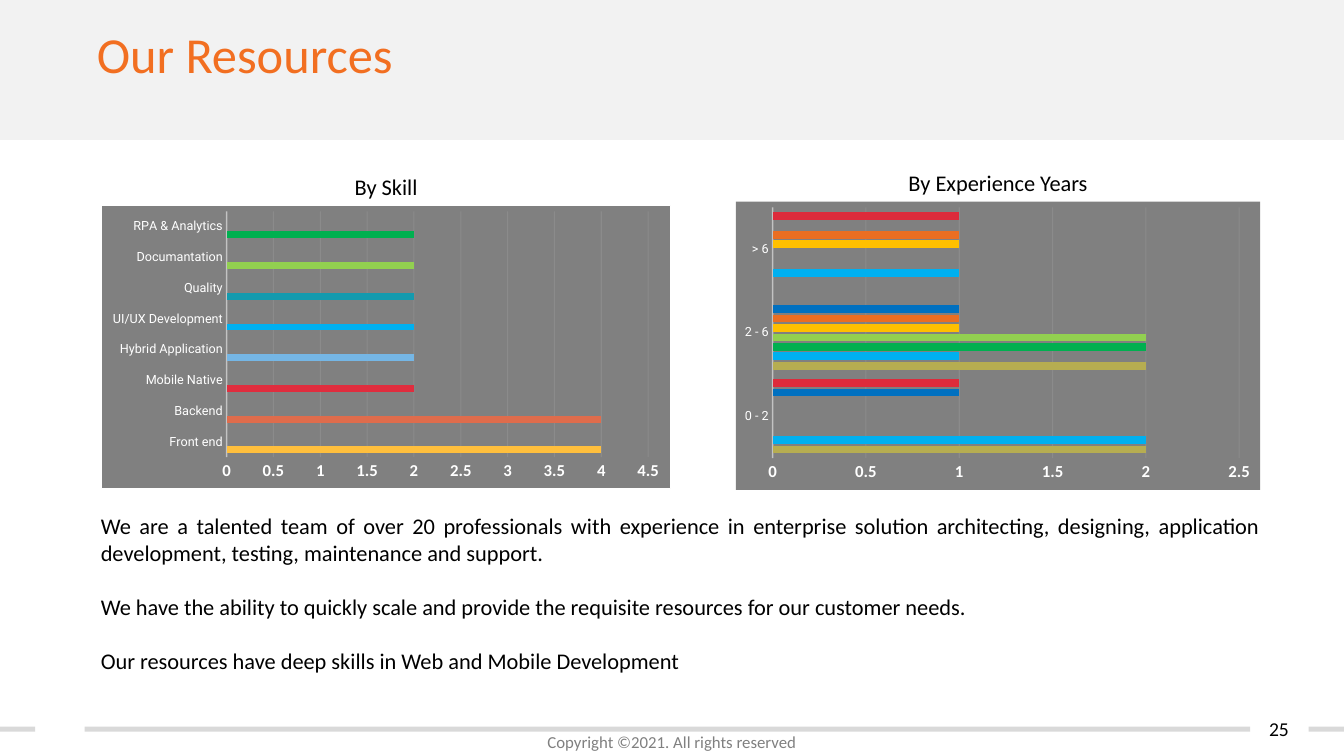
from collections import namedtuple

from lxml import etree
from pptx import Presentation
from pptx.chart.data import CategoryChartData
from pptx.dml.color import RGBColor
from pptx.enum.chart import XL_CHART_TYPE as ChartType, XL_TICK_MARK as TickMark
from pptx.enum.shapes import MSO_SHAPE as Shape
from pptx.enum.text import MSO_ANCHOR as Anchor, PP_ALIGN as Align
from pptx.oxml import parse_xml
from pptx.oxml.ns import nsdecls, qn
from pptx.util import Inches, Pt

WIDTH, HEIGHT = Inches(13.33), Inches(7.5)
Box = namedtuple("Box", "x y w h")

SKILLS = [
    ("Front end", 4, "FFBF3D"),
    ("Backend", 4, "DF6C4C"),
    ("Mobile Native", 2, "E02D3E"),
    ("Hybrid Application", 2, "75B6E5"),
    ("UI/UX Development", 2, "00B0F0"),
    ("Quality", 2, "149AAE"),
    ("Documantation", 2, "92D050"),
    ("RPA & Analytics", 2, "00B050"),
]
EXPERIENCE_YEARS = ["0 - 2", "2 - 6", "> 6"]
EXPERIENCE = [
    ((2, 2, None), "B6AD51"),
    ((2, 1, 1), "00B0F0"),
    ((None, 2, None), "00B050"),
    ((None, 2, None), "92D050"),
    ((None, 1, 1), "FFC000"),
    ((None, 1, 1), "EA6E22"),
    ((1, 1, None), "0070C0"),
    ((1, None, 1), "DD2B3B"),
]
STATEMENTS = [
    "We are a talented team of over 20 professionals with experience in enterprise solution "
    "architecting, designing, application development, testing, maintenance and support.",
    "We have the ability to quickly scale and provide the requisite resources for our customer needs.",
    "Our resources have deep skills in Web and Mobile Development",
]


def color(hex_value):
    """Turn a hex string into a colour."""
    return RGBColor.from_string(hex_value)


def place(box):
    """Turn a box in percent of the slide into lengths."""
    return [int(share * side / 100) for share, side in zip(box, (WIDTH, HEIGHT) * 2)]


def part(box, x, y, w, h):
    """Return a box given in percent of another box."""
    return Box(box.x + box.w * x / 100, box.y + box.h * y / 100, box.w * w / 100, box.h * h / 100)


def style_font(font, size, hex_value, name="Calibri", bold=False):
    """Set the look of a font."""
    font.size, font.name, font.bold = Pt(size), name, bold
    font.color.rgb = color(hex_value)


def write(frame, lines, size, hex_value="000000", align=Align.CENTER, gap=0):
    """Fill a text frame with one paragraph per line."""
    frame.word_wrap = True
    for index, line in enumerate(lines):
        paragraph = frame.add_paragraph() if index else frame.paragraphs[0]
        paragraph.alignment = align
        if index:
            paragraph.space_before = Pt(gap)
        run = paragraph.add_run()
        run.text = line
        style_font(run.font, size, hex_value)


def add_label(slide, box, lines, size, **look):
    """Add a text box and return its frame."""
    frame = slide.shapes.add_textbox(*place(box)).text_frame
    write(frame, lines, size, **look)
    return frame


def add_band(slide, box, hex_value):
    """Add a plain filled rectangle."""
    band = slide.shapes.add_shape(Shape.RECTANGLE, *place(box))
    band.shadow.inherit = False
    band.fill.solid()
    band.fill.fore_color.rgb = color(hex_value)
    band.line.fill.background()


def add_header(slide, box):
    """Draw the header band with the title on it."""
    add_band(slide, box, "F2F2F2")
    title = slide.shapes.title
    title.left, title.top, title.width, title.height = place(part(box, 6.45, 13, 89, 51.5))
    title.text_frame.vertical_anchor = Anchor.TOP
    write(title.text_frame, ["Our Resources"], 36, "F26F21", Align.LEFT)
    title.element.getparent().append(title.element)


def add_footer(slide, box):
    """Draw the footer rule, copyright line and page number."""
    for x, width in ((0, 2.63), (6.3, 86.72), (97.37, 2.63)):
        add_band(slide, part(box, x, 38.5, width, 10.6), "D9D9D9")
    add_label(slide, part(box, 0, 38.5, 100, 61.5), ["Copyright ©2021. All rights reserved"], 12,
              hex_value="808080")
    number = add_label(slide, part(box, 93.1, 0, 4.13, 85), ["25"], 14)
    number.vertical_anchor = Anchor.MIDDLE


def fade(owner, opacity):
    """Set the opacity of the line colour below a chart element."""
    for rgb in owner.iter(qn("a:srgbClr")):
        etree.SubElement(rgb, qn("a:alpha")).set("val", str(opacity * 1000))


def style_axes(chart, maximum):
    """Style the category and value axes."""
    names, values = chart.category_axis, chart.value_axis
    for axis in (names, values):
        axis.major_tick_mark = axis.minor_tick_mark = TickMark.NONE
    names.has_major_gridlines = False
    values.has_major_gridlines = True
    values.minimum_scale, values.maximum_scale, values.major_unit = 0, maximum, 0.5
    grid = values.major_gridlines.format.line
    for line, width in ((names.format.line, 1), (grid, 0.75)):
        line.width = Pt(width)
        line.color.rgb = color("F2F2F2")
    fade(chart.element.find(".//" + qn("c:catAx")), 54)
    fade(chart.element.find(".//" + qn("c:majorGridlines")), 10)
    values.format.line.fill.background()
    style_font(names.tick_labels.font, 9, "FFFFFF", "Roboto")
    style_font(values.tick_labels.font, 12, "FFFFFF", bold=True)


def style_area(chart, plot_x, plot_width, border):
    """Fill the chart area and fix the place of the plot in it."""
    outline = f'<a:solidFill><a:srgbClr val="{border}"/></a:solidFill>' if border else "<a:noFill/>"
    chart.element.find(qn("c:chart")).addnext(parse_xml(
        f'<c:spPr {nsdecls("c", "a")}><a:solidFill><a:srgbClr val="808080"/></a:solidFill>'
        f'<a:ln w="9525">{outline}</a:ln></c:spPr>'))
    plot_area = chart.element.find(".//" + qn("c:plotArea"))
    for old in plot_area.findall(qn("c:layout")):
        plot_area.remove(old)
    layout = etree.Element(qn("c:layout"))
    manual = etree.SubElement(layout, qn("c:manualLayout"))
    settings = (("layoutTarget", "inner"), ("xMode", "edge"), ("yMode", "edge"),
                ("x", plot_x), ("y", 0.02), ("w", plot_width), ("h", 0.87))
    for tag, value in settings:
        etree.SubElement(manual, qn("c:" + tag)).set("val", str(value))
    plot_area.insert(0, layout)


def add_bar_panel(slide, box, heading, categories, rows, maximum, plot_x, plot_width, border=None):
    """Draw a headed bar chart and return its series."""
    data = CategoryChartData()
    data.categories = categories
    for number, row in enumerate(rows, 1):
        data.add_series(f"Series {number}", row)
    chart = slide.shapes.add_chart(ChartType.BAR_CLUSTERED, *place(part(box, 0, 11.5, 100, 88.5)),
                                   data).chart
    chart.has_title = chart.has_legend = False
    style_font(chart.font, 10, "000000", bold=True)
    plot = chart.plots[0]
    plot.vary_by_categories = False
    plot.gap_width, plot.overlap = 115, -20
    style_axes(chart, maximum)
    style_area(chart, plot_x, plot_width, border)
    add_label(slide, part(box, 0, 0, 100, 11.5), [heading], 16)
    return plot.series


def paint(bar, hex_value):
    """Fill a series or one of its points."""
    bar.format.fill.solid()
    bar.format.fill.fore_color.rgb = color(hex_value)


def add_skill_panel(slide, box):
    """Draw the chart of people by skill."""
    names, counts, colors = zip(*SKILLS)
    empty = [None] * len(names)
    series = add_bar_panel(slide, box, "By Skill", names, [counts, empty, empty], 4.5, 0.22, 0.74,
                           "FFFFFF")
    for bar, hex_value in zip(series, ("1E84CE", "82AEB9", "798D8F")):
        paint(bar, hex_value)
    for index, hex_value in enumerate(colors):
        paint(series[0].points[index], hex_value)


def add_experience_panel(slide, box):
    """Draw the chart of people by years of experience."""
    rows, colors = zip(*EXPERIENCE)
    series = add_bar_panel(slide, box, "By Experience Years", EXPERIENCE_YEARS, rows, 2.5, 0.07, 0.89)
    for bar, hex_value in zip(series, colors):
        paint(bar, hex_value)


def add_statements(slide, box):
    """Write the statements about the team."""
    frame = add_label(slide, box, STATEMENTS, 16, align=Align.JUSTIFY, gap=19.5)
    frame.margin_left = frame.margin_right = 0


def main():
    """Build and save the slide."""
    deck = Presentation()
    deck.slide_width, deck.slide_height = WIDTH, HEIGHT
    slide = deck.slides.add_slide(deck.slide_layouts[5])
    add_header(slide, Box(0, 0, 100, 18.5))
    add_footer(slide, Box(0, 93.7, 100, 6.3))
    add_statements(slide, Box(7.5, 67.07, 86.27, 22.93))
    add_skill_panel(slide, Box(7.5, 22.27, 42.46, 42.4))
    add_experience_panel(slide, Box(54.76, 21.73, 39, 43.07))
    deck.save("out.pptx")


if __name__ == "__main__":
    main()
